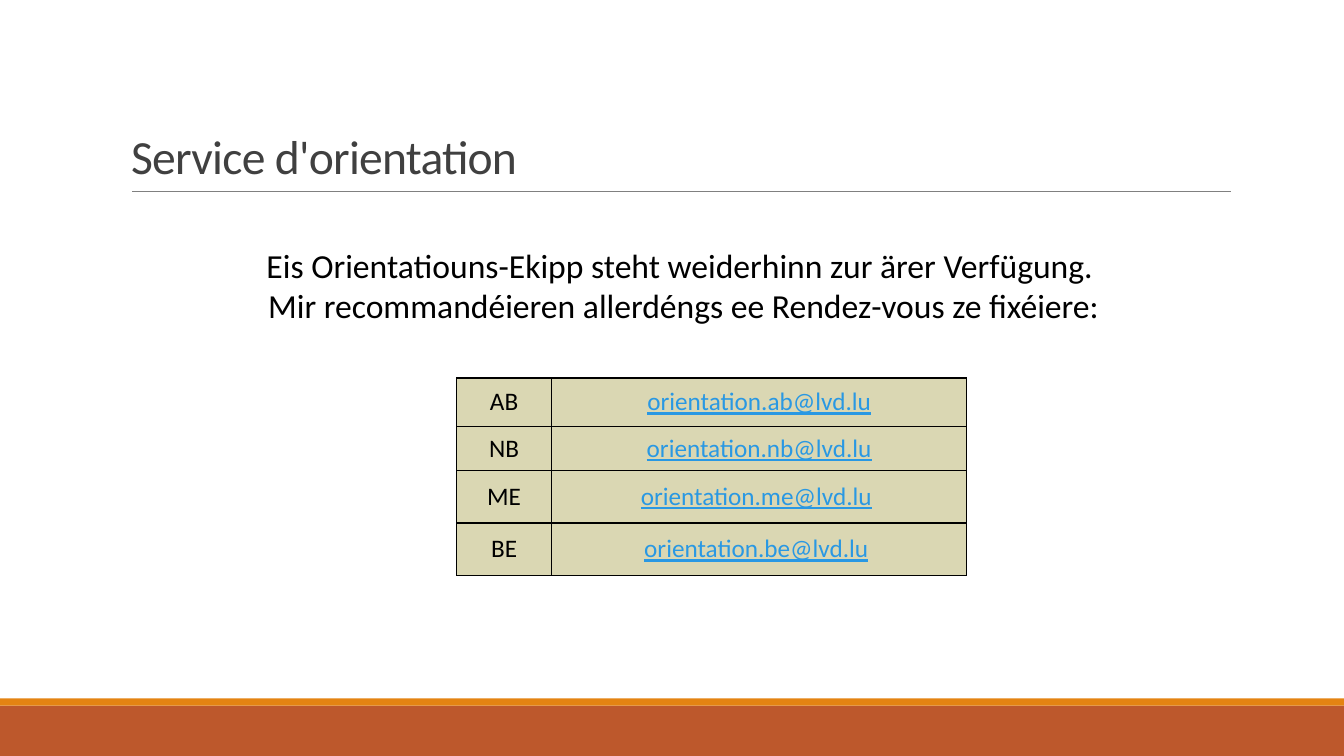
from itertools import product
from lxml.etree import SubElement as Sub
from pptx import Presentation
from pptx.dml.color import RGBColor as Rgb
from pptx.enum.shapes import MSO_CONNECTOR as Link, MSO_SHAPE as Form
from pptx.enum.text import MSO_ANCHOR as Anchor, MSO_AUTO_SIZE as Auto, PP_ALIGN as Align
from pptx.oxml.ns import qn
from pptx.util import Inches, Pt

TITLE = "Service d'orientation"
BODY = [
    "Eis Orientatiouns-Ekipp steht weiderhinn zur ärer Verfügung. ",
    "Mir recommandéieren allerdéngs ee Rendez-vous ze fixéiere:",
]
TEAMS = [
    ("AB", "orientation.ab@lvd.lu"),
    ("NB", "orientation.nb@lvd.lu"),
    ("ME", "orientation.me@lvd.lu "),
    ("BE", "orientation.be@lvd.lu "),
]
COLS = [0.94, 4.12]
ROWS = [0.48, 0.44, 0.52, 0.52]
WIDE, HIGH = 13.33, 7.5
BANDS = [(7, 0.5, "BD582C"), (6.93, 0.07, "E48312")]


def color(code):
    return Rgb.from_string(code)


def box(*sizes):
    return [Inches(size) for size in sizes]


def place(shape, *sizes):
    shape.left, shape.top, shape.width, shape.height = box(*sizes)


def write(frame, lines, size=18, ink="000000", align=Align.CENTER, space=1.0, under=False, track=0):
    for num, line in enumerate(lines):
        para = frame.paragraphs[0] if num == 0 else frame.add_paragraph()
        para.alignment, para.line_spacing = align, space
        para.space_before = para.space_after = Pt(0)
        props = para._p.get_or_add_pPr()
        props.set("marL", "0")
        props.set("indent", "0")
        Sub(props, qn("a:buNone"))
        text = line.rstrip(" ")
        parts = [(text, under), (line[len(text):], False)]
        for part, mark in parts:
            if part:
                run = para.add_run()
                run.text = part
                font = run.font
                font.name, font.size, font.underline = "Calibri", Pt(size), mark
                font.color.rgb = color(ink)
                if track:
                    run._r.get_or_add_rPr().set("spc", str(int(track * 100)))


def border(cell):
    props = cell._tc.get_or_add_tcPr()
    for spot, side in enumerate(("lnL", "lnR", "lnT", "lnB")):
        line = props.makeelement(qn("a:" + side), {"w": str(Pt(1))})
        fill = Sub(line, qn("a:solidFill"))
        Sub(fill, qn("a:srgbClr"), val="000000")
        props.insert(spot, line)


def frame(slide):
    for top, tall, code in BANDS:
        band = slide.shapes.add_shape(Form.RECTANGLE, *box(0, top, WIDE, tall))
        band.shadow.inherit = False
        band.fill.solid()
        band.fill.fore_color.rgb = color(code)
        band.line.fill.background()
    rule = slide.shapes.add_connector(Link.STRAIGHT, *box(1.31, 1.9, 12.21, 1.9))
    rule.line.color.rgb = color("808080")
    rule.line.width = Pt(0.5)
    Sub(rule._element.spPr, qn("a:effectLst"))


def texts(slide):
    title, body = slide.placeholders
    place(title, 1.2, 0.28, 11.73, 1.6)
    place(body, 1.2, 1.97, 11.16, 2.93)
    for shape, anchor in ((title, Anchor.BOTTOM), (body, Anchor.TOP)):
        shape.text_frame.auto_size = Auto.NONE
        shape.text_frame.word_wrap = True
        shape.text_frame.vertical_anchor = anchor
    body.text_frame.margin_top = Inches(0.46)
    write(title.text_frame, [TITLE], size=34, ink="404040", align=Align.LEFT, space=0.85, track=-0.5)
    write(body.text_frame, BODY, size=24)


def grid(slide):
    area = box(4.53, 3.75, sum(COLS), sum(ROWS))
    table = slide.shapes.add_table(len(ROWS), len(COLS), *area).table
    table.first_row = table.horz_banding = False
    for col, size in zip(table.columns, COLS):
        col.width = Inches(size)
    for row, size in zip(table.rows, ROWS):
        row.height = Inches(size)
    for row, col in product(range(len(ROWS)), range(len(COLS))):
        cell = table.cell(row, col)
        cell.margin_left = cell.margin_right = cell.margin_top = cell.margin_bottom = 0
        cell.vertical_anchor = Anchor.MIDDLE
        cell.fill.solid()
        cell.fill.fore_color.rgb = color("DAD7B3")
        border(cell)
        mail = col == 1
        write(cell.text_frame, [TEAMS[row][col]], ink="2998E3" if mail else "000000", under=mail)


def main():
    deck = Presentation()
    deck.slide_width, deck.slide_height = box(WIDE, HIGH)
    slide = deck.slides.add_slide(deck.slide_layouts[1])
    frame(slide)
    texts(slide)
    grid(slide)
    deck.save("out.pptx")


if __name__ == "__main__":
    main()
